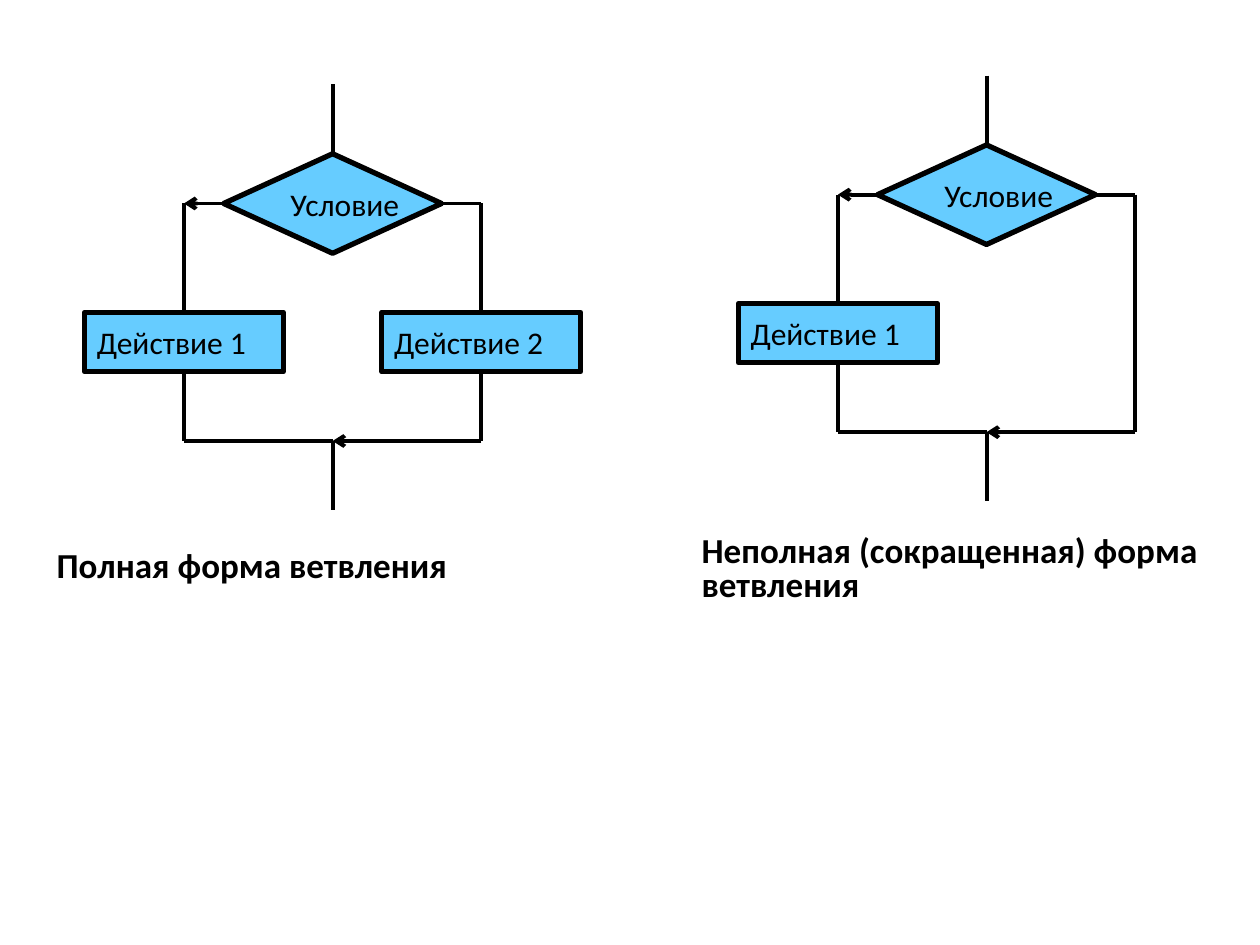
from dataclasses import dataclass
from typing import Optional

from lxml.etree import SubElement
from pptx import Presentation
from pptx.dml.color import RGBColor
from pptx.enum.shapes import MSO_CONNECTOR, MSO_SHAPE
from pptx.enum.text import MSO_ANCHOR, PP_ALIGN
from pptx.oxml.ns import qn
from pptx.shapes.autoshape import Shape
from pptx.shapes.connector import Connector
from pptx.shapes.shapetree import GroupShapes
from pptx.util import Inches, Pt


@dataclass(frozen=True)
class Theme:
    ink: RGBColor = RGBColor(0x00, 0x00, 0x00)
    block: RGBColor = RGBColor(0x66, 0xCC, 0xFF)
    font: str = "Calibri"
    label_size: float = 18
    caption_size: float = 20
    outline: float = 3
    flow: float = 2.25


@dataclass(frozen=True)
class Branching:
    center: float
    top: float
    left_action: str
    right_action: Optional[str]


@dataclass(frozen=True)
class Caption:
    text: str
    left: float
    top: float
    width: float
    height: float


@dataclass(frozen=True)
class Joint:
    shape: Shape
    site: int


@dataclass(frozen=True)
class Point:
    x: float
    y: float


THEME = Theme()
TOP, LEFT, BOTTOM, RIGHT = range(4)
STEM = 0.55
DECISION_WIDTH, DECISION_HEIGHT = 1.73, 0.79
ACTION_WIDTH, ACTION_HEIGHT = 1.58, 0.47
ACTION_DROP = 1.81
JOIN_DROP = 2.83
BRANCH_REACH = 1.18

BRANCHINGS = [
    Branching(2.64, 0.67, "Действие 1", "Действие 2"),
    Branching(7.83, 0.6, "Действие 1", None),
]
CAPTIONS = [
    Caption("Полная форма ветвления", 0.35, 4.33, 4.09, 0.38),
    Caption("Неполная (сокращенная) форма ветвления", 5.47, 4.21, 4.33, 0.65),
]


def write_text(shape: Shape, text: str, *, size: float, bold: bool = False,
               wrap: bool = False, anchor: MSO_ANCHOR = MSO_ANCHOR.MIDDLE,
               spacing: float = 1.0) -> None:
    frame = shape.text_frame
    frame.word_wrap = wrap
    frame.vertical_anchor = anchor
    paragraph = frame.paragraphs[0]
    paragraph.alignment = PP_ALIGN.LEFT
    paragraph.line_spacing = spacing
    run = paragraph.add_run()
    run.text = text
    run.font.name = THEME.font
    run.font.size = Pt(size)
    run.font.bold = bold
    run.font.color.rgb = THEME.ink


def draw_block(shapes: GroupShapes, kind: MSO_SHAPE, text: str, center: float,
               top: float, width: float, height: float) -> Shape:
    block = shapes.add_shape(kind, Inches(center - width / 2), Inches(top),
                             Inches(width), Inches(height))
    block.shadow.inherit = False
    block.fill.solid()
    block.fill.fore_color.rgb = THEME.block
    block.line.color.rgb = THEME.ink
    block.line.width = Pt(THEME.outline)
    write_text(block, text, size=THEME.label_size)
    return block


def draw_flow(shapes: GroupShapes, start: Point, end: Point, *,
              start_joint: Optional[Joint] = None,
              end_joint: Optional[Joint] = None,
              arrow: bool = False) -> Connector:
    flow = shapes.add_connector(MSO_CONNECTOR.STRAIGHT, Inches(start.x), Inches(start.y),
                                Inches(end.x), Inches(end.y))
    flow.line.color.rgb = THEME.ink
    flow.line.width = Pt(THEME.flow)
    if arrow:
        SubElement(flow.line._get_or_add_ln(), qn("a:tailEnd"), type="arrow")
    SubElement(flow._element.spPr, qn("a:effectLst"))
    if start_joint:
        flow.begin_connect(start_joint.shape, start_joint.site)
    if end_joint:
        flow.end_connect(end_joint.shape, end_joint.site)
    return flow


def draw_branch(shapes: GroupShapes, branching: Branching, decision: Shape,
                action_text: Optional[str], direction: int) -> None:
    x = branching.center + direction * BRANCH_REACH
    middle = branching.top + STEM + DECISION_HEIGHT / 2
    action_top = branching.top + ACTION_DROP
    action_bottom = action_top + ACTION_HEIGHT
    join = Point(branching.center, branching.top + JOIN_DROP)
    upper, lower = Point(x, middle), Point(x, join.y)
    on_left = direction < 0

    decision_side = Point(branching.center + direction * DECISION_WIDTH / 2, middle)
    draw_flow(shapes, decision_side, upper, arrow=on_left,
              start_joint=Joint(decision, LEFT if on_left else RIGHT))
    if action_text:
        action = draw_block(shapes, MSO_SHAPE.RECTANGLE, action_text, x, action_top,
                            ACTION_WIDTH, ACTION_HEIGHT)
        draw_flow(shapes, upper, Point(x, action_top), end_joint=Joint(action, TOP))
        draw_flow(shapes, Point(x, action_bottom), lower,
                  start_joint=Joint(action, BOTTOM))
    else:
        draw_flow(shapes, upper, lower)
    if on_left:
        draw_flow(shapes, join, lower)
    else:
        draw_flow(shapes, lower, join, arrow=True)


def draw_branching(shapes: GroupShapes, branching: Branching) -> None:
    center, top = branching.center, branching.top
    decision = draw_block(shapes, MSO_SHAPE.FLOWCHART_DECISION, "Условие", center,
                          top + STEM, DECISION_WIDTH, DECISION_HEIGHT)
    draw_flow(shapes, Point(center, top), Point(center, top + STEM),
              end_joint=Joint(decision, TOP))
    draw_branch(shapes, branching, decision, branching.left_action, -1)
    draw_branch(shapes, branching, decision, branching.right_action, 1)
    draw_flow(shapes, Point(center, top + JOIN_DROP),
              Point(center, top + JOIN_DROP + STEM))


def main() -> None:
    presentation = Presentation()
    presentation.slide_width = Inches(10)
    presentation.slide_height = Inches(7.5)
    slide = presentation.slides.add_slide(presentation.slide_layouts[6])
    for branching in BRANCHINGS:
        draw_branching(slide.shapes.add_group_shape().shapes, branching)
    for caption in CAPTIONS:
        box = slide.shapes.add_textbox(Inches(caption.left), Inches(caption.top),
                                       Inches(caption.width), Inches(caption.height))
        write_text(box, caption.text, size=THEME.caption_size, bold=True, wrap=True,
                   anchor=MSO_ANCHOR.TOP, spacing=0.8)
    presentation.save("out.pptx")


if __name__ == "__main__":
    main()
